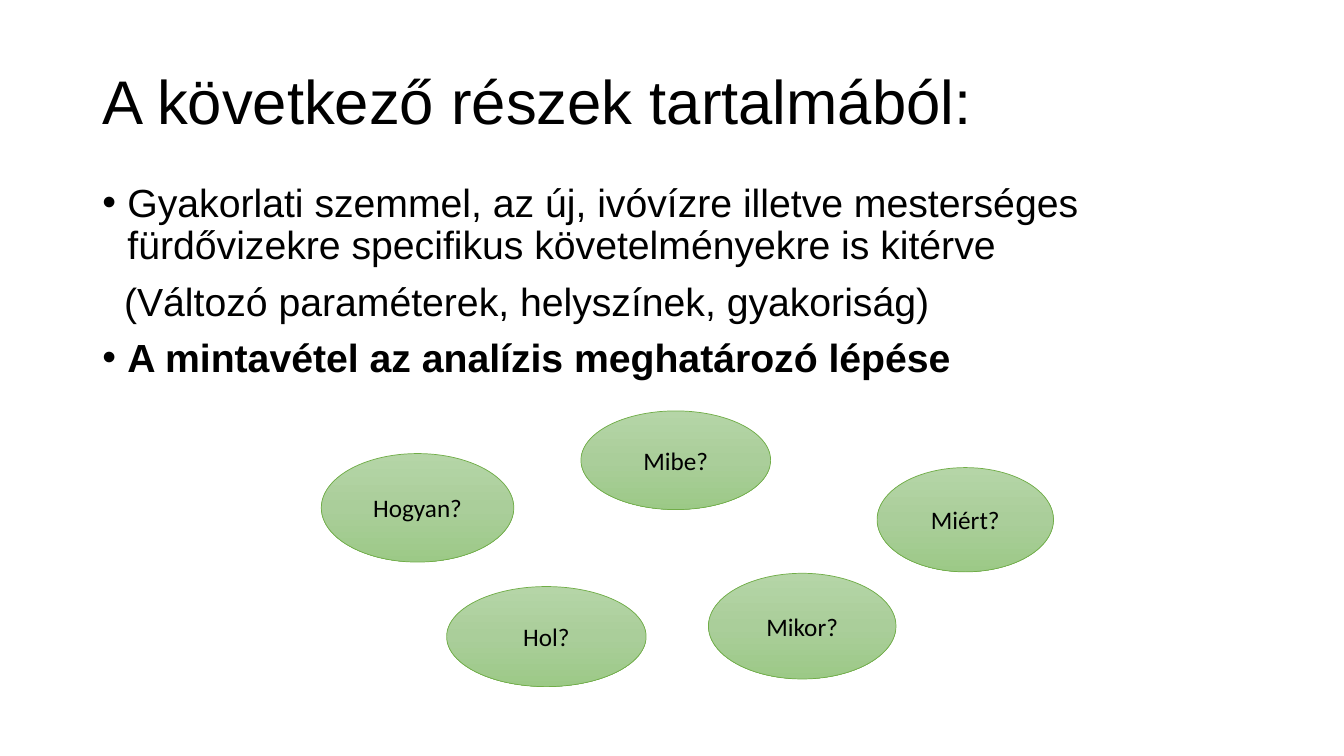
from copy import deepcopy

from lxml import etree
from pptx import Presentation
from pptx.dml.color import RGBColor
from pptx.enum.shapes import MSO_SHAPE
from pptx.enum.text import MSO_ANCHOR, PP_ALIGN
from pptx.oxml.ns import qn
from pptx.util import Pt

OVAL = MSO_SHAPE.OVAL
MIDDLE = MSO_ANCHOR.MIDDLE
CENTER = PP_ALIGN.CENTER

COLORS = {
    "text": "000000",
    "outline": "70AD47",
    "light": "B5D5A7",
    "medium": "AACE9A",
    "deep": "9CC987",
}
MARGIN_LEFT, CONTENT_WIDTH = 66, 828


def color(name):
    return RGBColor.from_string(COLORS[name])


def add_span(paragraph, text, font_name, size, bold=False):
    span = paragraph.add_run()
    span.text = text
    span.font.name = font_name
    span.font.size = Pt(size)
    span.font.bold = bold
    span.font.color.rgb = color("text")


deck = Presentation()
deck.slide_width, deck.slide_height = Pt(960), Pt(540)
page = deck.slides.add_slide(deck.slide_layouts[6])

# Title
title_box = page.shapes.add_textbox(Pt(MARGIN_LEFT), Pt(28.75), Pt(CONTENT_WIDTH), Pt(92))
title_box.text_frame.word_wrap = True
title_box.text_frame.vertical_anchor = MIDDLE
title = title_box.text_frame.paragraphs[0]
title.line_spacing = 0.9
add_span(title, "A következő részek tartalmából:", "Arial", 44)

# Body: text, bulleted, bold
body_lines = [
    ("Gyakorlati szemmel, az új, ivóvízre illetve mesterséges "
     "fürdővizekre specifikus követelményekre is kitérve", True, False),
    ("(Változó paraméterek, helyszínek, gyakoriság)", False, False),
    ("A mintavétel az analízis meghatározó lépése", True, True),
]
body_box = page.shapes.add_textbox(Pt(MARGIN_LEFT), Pt(127.5), Pt(CONTENT_WIDTH), Pt(358.5))
body = body_box.text_frame
body.word_wrap = True
for index, (text, bulleted, bold) in enumerate(body_lines):
    paragraph = body.add_paragraph() if index else body.paragraphs[0]
    paragraph.line_spacing = 0.9
    if index:
        paragraph.space_before = Pt(10)
    properties = paragraph._p.get_or_add_pPr()
    properties.set("marL", str(Pt(18 if bulleted else 15.6)))
    properties.set("indent", str(Pt(-18 if bulleted else 0)))
    if bulleted:
        etree.SubElement(properties, qn("a:buFont"), typeface="Arial")
        etree.SubElement(properties, qn("a:buChar"), char="•")
    add_span(paragraph, text, "Arial", 28, bold)

# Question ovals: text, left, top, width, height
questions = [
    ("Hol?", 319, 419, 142.5, 71.5),
    ("Mikor?", 506, 409.5, 134, 75.5),
    ("Miért?", 626.5, 334, 126, 74.5),
    ("Hogyan?", 229.5, 324, 137.5, 77.5),
    ("Mibe?", 415, 293.5, 135.5, 70.5),
]
for text, left, top, width, height in questions:
    oval = page.shapes.add_shape(OVAL, Pt(left), Pt(top), Pt(width), Pt(height))
    oval.shadow.inherit = False
    oval.line.color.rgb = color("outline")
    oval.line.width = Pt(0.5)

    oval.fill.gradient()
    oval.fill.gradient_angle = 270
    stop_list = oval.element.spPr.find(qn("a:gradFill")).find(qn("a:gsLst"))
    stop_list.insert(1, deepcopy(stop_list[0]))
    for stop, name, position in zip(
        oval.fill.gradient_stops, ("light", "medium", "deep"), (0, 0.5, 1)
    ):
        stop.color.rgb = color(name)
        stop.position = position

    oval.text_frame.word_wrap = True
    oval.text_frame.vertical_anchor = MIDDLE
    question = oval.text_frame.paragraphs[0]
    question.alignment = CENTER
    add_span(question, text, "Calibri", 18)

deck.save("out.pptx")
